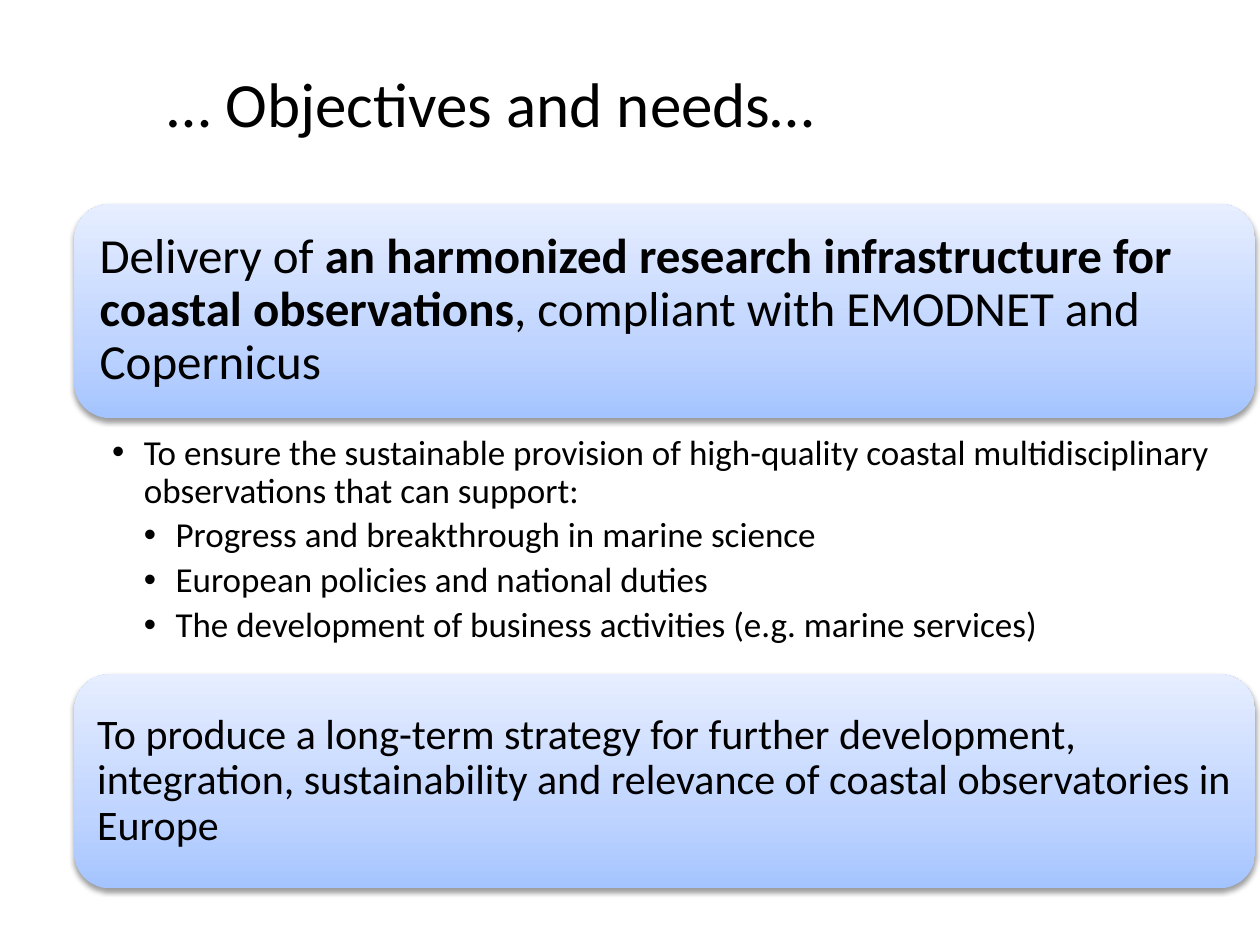
from lxml.etree import SubElement
from pptx import Presentation
from pptx.dml.color import RGBColor
from pptx.enum.shapes import MSO_SHAPE
from pptx.enum.text import MSO_ANCHOR, PP_ALIGN
from pptx.oxml.ns import qn
from pptx.util import Cm, Pt

FONT = "Calibri"
BLACK = "000000"
GRADIENT = [(0, "A4C4FF"), (35, "BFD4FF"), (100, "E6EEFF")]
LEFT, WIDTH, CARD_HEIGHT = 1.5, 23.8, 4.32
INDENT = 0.64

OBJECTIVE = [
    ("Delivery of ", False),
    ("an harmonized research infrastructure for coastal observations", True),
    (", compliant with EMODNET and Copernicus", False),
]
STRATEGY = [
    ("To produce a long-term strategy for further development, integration, "
     "sustainability and relevance of coastal observatories in Europe", False),
]
AIMS = [
    (1, "To ensure the sustainable provision of high-quality coastal "
        "multidisciplinary observations that can support:"),
    (2, "Progress and breakthrough in marine science"),
    (2, "European policies and national duties"),
    (2, "The development of business activities (e.g. marine services)"),
]


def rgb(value):
    return RGBColor.from_string(value)


def add_run(p, text, size, bold=False):
    r = p.add_run()
    r.text = text
    r.font.name = FONT
    r.font.size = Pt(size)
    r.font.bold = bold
    r.font.color.rgb = rgb(BLACK)


def add_box(s, left, top, width, height, insets, anchor=MSO_ANCHOR.MIDDLE):
    tf = s.shapes.add_textbox(Cm(left), Cm(top), Cm(width), Cm(height)).text_frame
    tf.word_wrap = True
    tf.vertical_anchor = anchor
    tf.margin_left, tf.margin_top, tf.margin_right, tf.margin_bottom = map(Cm, insets)
    return tf


def add_title(s, text):
    tf = add_box(s, 1.9, 0.74, 16, 2.64, (0.25, 0.13, 0.25, 0.13))
    p = tf.paragraphs[0]
    p.alignment = PP_ALIGN.CENTER
    add_run(p, text, 36)


def add_gradient(sp):
    sp.fill.gradient()
    sp.fill.gradient_angle = 90
    stops = sp.element.spPr.find(qn("a:gradFill")).find(qn("a:gsLst"))
    for stop in list(stops):
        stops.remove(stop)
    for position, color in GRADIENT:
        stop = SubElement(stops, qn("a:gs"), pos=str(position * 1000))
        SubElement(stop, qn("a:srgbClr"), val=color)


def add_shadow(sp):
    sp.shadow.inherit = False
    effects = sp.element.spPr.find(qn("a:effectLst"))
    shadow = SubElement(effects, qn("a:outerShdw"), blurRad=str(Pt(3.1)),
                        dist=str(Pt(1.6)), dir="5400000", rotWithShape="0")
    color = SubElement(shadow, qn("a:srgbClr"), val=BLACK)
    SubElement(color, qn("a:alpha"), val="38000")


def add_card(s, top, runs, size, inset):
    sp = s.shapes.add_shape(MSO_SHAPE.ROUNDED_RECTANGLE, Cm(LEFT), Cm(top),
                            Cm(WIDTH), Cm(CARD_HEIGHT))
    sp.line.fill.background()
    add_gradient(sp)
    add_shadow(sp)
    # The text area sits just inside the rounded corners
    pad = 0.21
    tf = add_box(s, LEFT + pad, top + pad, WIDTH - 2 * pad,
                 CARD_HEIGHT - 2 * pad, [inset] * 4)
    p = tf.paragraphs[0]
    p.line_spacing = 0.9
    for text, bold in runs:
        add_run(p, text, size, bold)


def add_bullets(s, top, height, items, size):
    tf = add_box(s, LEFT, top, WIDTH, height, (0.76, 0.08, 0.41, 0.08),
                 MSO_ANCHOR.TOP)
    for i, (level, text) in enumerate(items):
        p = tf.paragraphs[0] if i == 0 else tf.add_paragraph()
        p.level = level
        p.line_spacing = 0.9
        p.space_after = Pt(size * 0.2)
        pPr = p._p.get_or_add_pPr()
        pPr.set("marL", str(Cm(INDENT * level)))
        pPr.set("indent", str(-Cm(INDENT)))
        SubElement(pPr, qn("a:buFont"), typeface="Arial")
        SubElement(pPr, qn("a:buChar"), char="•")
        add_run(p, text, size)


def main():
    prs = Presentation()
    prs.slide_width, prs.slide_height = Cm(25.4), Cm(19.05)
    s = prs.slides.add_slide(prs.slide_layouts[6])

    # Heading
    add_title(s, "… Objectives and needs…")

    # Main objective with its aims
    add_card(s, 4.11, OBJECTIVE, 28, 0.3)
    add_bullets(s, 8.69, 4.57, AIMS, 20)

    # Long-term strategy
    add_card(s, 13.59, STRATEGY, 24, 0.25)

    prs.save("out.pptx")


if __name__ == "__main__":
    main()
